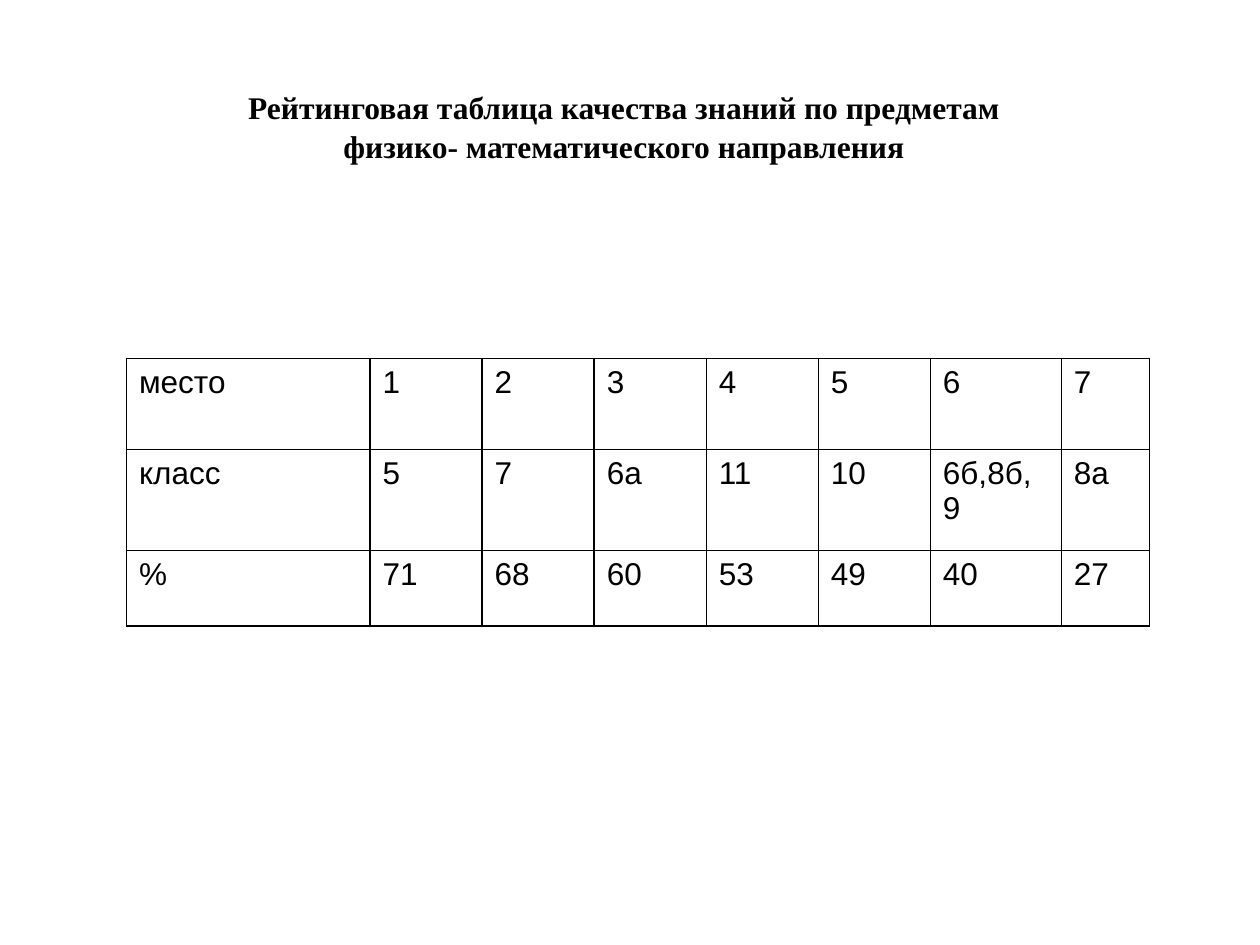
import dataclasses

import lxml.etree
import pptx
import pptx.dml.color
import pptx.enum.text
import pptx.oxml.ns
import pptx.util
from pptx.util import Cm, Pt


@dataclasses.dataclass(frozen=True)
class Theme:
    ink: str = "000000"
    title_font: str = "Times New Roman"
    body_font: str = "Arial"
    size: int = 18
    border: float = 1


THEME = Theme()
TITLE = {"name": THEME.title_font, "size": Pt(THEME.size), "bold": True}
BODY = {"name": THEME.body_font, "size": Pt(THEME.size), "bold": False}

TITLE_LINES = ["Рейтинговая таблица качества знаний по предметам",
               "физико- математического направления"]
RATING = [
    ["место", "1", "2", "3", "4", "5", "6", "7"],
    ["класс", "5", "7", "6а", "11", "10", "6б,8б,9", "8а"],
    ["%", "71", "68", "60", "53", "49", "40", "27"],
]
COLUMN_WIDTHS = [4.91] + [2.26] * 5 + [2.64, 1.78]
ROW_HEIGHTS = [1.83, 2.04, 1.52]


def write(p, text, style):
    r = p.add_run()
    r.text = text
    for key, value in style.items():
        setattr(r.font, key, value)
    r.font.color.rgb = pptx.dml.color.RGBColor.from_string(THEME.ink)


def add_borders(cell):
    tc_pr = cell._tc.get_or_add_tcPr()
    for i, side in enumerate(("a:lnL", "a:lnR", "a:lnT", "a:lnB")):
        ln = lxml.etree.Element(pptx.oxml.ns.qn(side), w=str(Pt(THEME.border)))
        fill = lxml.etree.SubElement(ln, pptx.oxml.ns.qn("a:solidFill"))
        lxml.etree.SubElement(fill, pptx.oxml.ns.qn("a:srgbClr"), val=THEME.ink)
        # Border lines must stand before the cell fill
        tc_pr.insert(i, ln)


def add_title(s, left, top, width, height):
    tf = s.shapes.add_textbox(Cm(left), Cm(top), Cm(width), Cm(height)).text_frame
    frame = {"word_wrap": False,
             "vertical_anchor": pptx.enum.text.MSO_ANCHOR.MIDDLE,
             "margin_left": 0, "margin_right": 0,
             "margin_top": 0, "margin_bottom": 0}
    for key, value in frame.items():
        setattr(tf, key, value)
    for i, line in enumerate(TITLE_LINES):
        p = tf.add_paragraph() if i else tf.paragraphs[0]
        p.alignment = pptx.enum.text.PP_ALIGN.CENTER
        p.line_spacing = 1.05
        write(p, line, TITLE)


def add_rating_table(s, left, top):
    table = s.shapes.add_table(
        len(ROW_HEIGHTS), len(COLUMN_WIDTHS), Cm(left), Cm(top),
        Cm(sum(COLUMN_WIDTHS)), Cm(sum(ROW_HEIGHTS))).table
    table.first_row = table.horz_banding = False
    for column, width in zip(table.columns, COLUMN_WIDTHS):
        column.width = Cm(width)
    for row, height, texts in zip(table.rows, ROW_HEIGHTS, RATING):
        row.height = Cm(height)
        for cell, text in zip(row.cells, texts):
            cell.fill.background()
            add_borders(cell)
            write(cell.text_frame.paragraphs[0], text, BODY)


def main():
    prs = pptx.Presentation()
    prs.slide_width, prs.slide_height = Cm(25.4), Cm(19.05)
    s = prs.slides.add_slide(prs.slide_layouts[6])
    # Heading
    add_title(s, 1.8, 0.5, 21.56, 4.06)
    # Rating by class
    add_rating_table(s, 2.55, 7.23)
    prs.save("out.pptx")


if __name__ == "__main__":
    main()
